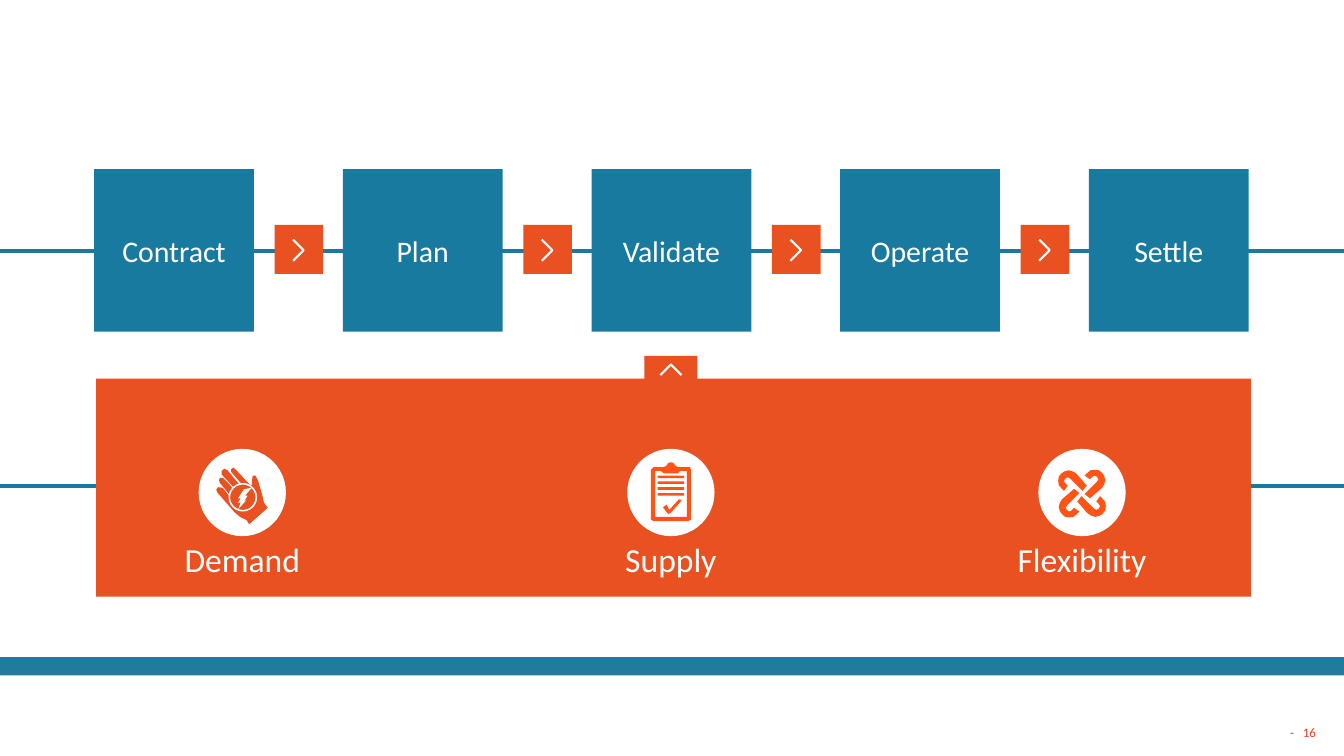
"""Build the slide showing a five-step process fed by demand, supply and flexibility."""
from pptx import Presentation
from pptx.dml.color import RGBColor
from pptx.enum.shapes import MSO_CONNECTOR as Connector, MSO_SHAPE as Shape
from pptx.enum.text import MSO_ANCHOR as Anchor, PP_ALIGN as Align
from pptx.oxml.xmlchemy import OxmlElement
from pptx.util import Cm, Pt

BLUE, BAR_BLUE, ORANGE = "197AA0", "207C9E", "E95120"
ICON_ORANGE, NUMBER_RED, WHITE = "FF5415", "EE3E27", "FFFFFF"
WIDTH, HEIGHT = 25.4, 14.29

CHEVRON = [(-10, -20), (10, 0), (-10, 20)]
TICK = [(15, 13), (-3, 33), (-8, 23), (-15, 28), (-5, 41), (0, 38), (18, 18), (20, 14)]
BOARD_EDGE = [(36, -48), (13, -48), (8, -51), (5, -56), (0, -57), (-5, -56), (-8, -51),
              (-13, -48), (-33, -48), (-38, -43), (-38, 51), (-33, 54), (33, 54),
              (38, 51), (38, -43)]
BOARD_PAPER = [(30, 46), (-30, 46), (-30, -41), (-20, -41), (-13, -36), (13, -36),
               (18, -41), (30, -41)]
KNOT_LOOP = [(-34, -5), (-27, -15), (-32, -20), (-34, -24), (-32, -28), (-27, -31),
             (-22, -28), (1, -5), (9, -15), (-11, -38), (-18, -42), (-25, -44),
             (-33, -42), (-39, -38), (-44, -32), (-45, -24), (-44, -16), (-39, -10)]
HAND = [(25, -32), (20, -32), (18, -22), (18, -14), (15, -14), (-13, -44), (-17, -47),
        (-21, -44), (-21, -39), (3, -11), (5, -7), (2, -6), (-13, -24), (-28, -42),
        (-34, -45), (-39, -41), (-39, -34), (-8, -1), (-7, 4), (-10, 4), (-23, -14),
        (-36, -27), (-42, -28), (-44, -24), (-43, -19), (-20, 9), (-18, 13), (-21, 12),
        (-33, -4), (-38, -9), (-46, -10), (-49, -6), (-48, -1), (-15, 37), (-3, 47),
        (8, 52), (13, 60), (48, 29), (41, 19), (38, 6), (30, -22)]
BOLT = [(5, 6), (18, -9), (3, -6), (-8, 11), (-3, 11), (-8, 19), (-3, 19), (-8, 32),
        (8, 14), (3, 17), (10, 6)]


def rgb(value):
    """Turn a hex string into a colour."""
    return RGBColor.from_string(value)


def turned(points, quarters):
    """Turn points clockwise about the origin by quarter turns."""
    for _ in range(quarters):
        points = [(-y, x) for x, y in points]
    return points


class Painter:
    """Hold the font and the current slide, and draw each kind of element."""

    def __init__(self, slide, font="Calibri"):
        """Keep the slide and the font."""
        self.shapes = slide.shapes
        self.font = font

    def style(self, shape, fill, line=None, weight=0.03):
        """Set fill and outline and drop the shadow."""
        shape.shadow.inherit = False
        if fill:
            shape.fill.solid()
            shape.fill.fore_color.rgb = rgb(fill)
        else:
            shape.fill.background()
        if line:
            shape.line.color.rgb = rgb(line)
            shape.line.width = Cm(weight)
        else:
            shape.line.fill.background()

    def format_run(self, run, size, color):
        """Set the font of a run."""
        run.font.name, run.font.size = self.font, Pt(size)
        run.font.color.rgb = rgb(color)

    def box(self, left, top, width, height, fill, text="", size=16):
        """Draw a rectangle with optional centred white text."""
        box = self.shapes.add_shape(Shape.RECTANGLE, Cm(left), Cm(top), Cm(width), Cm(height))
        self.style(box, fill)
        if text:
            frame = box.text_frame
            frame.text = text
            frame.vertical_anchor = Anchor.MIDDLE
            frame.paragraphs[0].alignment = Align.CENTER
            self.format_run(frame.paragraphs[0].runs[0], size, WHITE)

    def disc(self, x, y, diameter, fill, line=None):
        """Draw a circle about its centre."""
        corner = Cm(x - diameter / 2), Cm(y - diameter / 2)
        disc = self.shapes.add_shape(Shape.OVAL, *corner, Cm(diameter), Cm(diameter))
        self.style(disc, fill, line)

    def outline(self, x, y, contours, fill=None, line=None):
        """Draw contours given in hundredths of a centimetre about a centre."""
        builder = self.shapes.build_freeform(*contours[0][0], scale=Cm(0.01))
        for index, points in enumerate(contours):
            if index:
                builder.move_to(*points[0])
            builder.add_line_segments(points[1:], close=bool(fill))
        self.style(builder.convert_to_shape(Cm(x), Cm(y)), fill, line, 0.04)

    def rail(self, y):
        """Draw a horizontal line across the slide."""
        rail = self.shapes.add_connector(Connector.STRAIGHT, 0, Cm(y), Cm(WIDTH), Cm(y))
        rail.line.color.rgb = rgb(BLUE)
        rail.line.width = Cm(0.07)
        rail._element.spPr.append(OxmlElement("a:effectLst"))

    def page_number(self, number):
        """Write the page number at the bottom right."""
        frame = self.shapes.add_textbox(Cm(21.82), Cm(13.11), Cm(3.3), Cm(1.02)).text_frame
        frame.word_wrap = True
        frame.vertical_anchor = Anchor.BOTTOM
        paragraph = frame.paragraphs[0]
        paragraph.alignment = Align.RIGHT
        paragraph.line_spacing = 0.93
        for text, color in (("- ", BAR_BLUE), (number, NUMBER_RED)):
            run = paragraph.add_run()
            run.text = text
            self.format_run(run, 7, color)
        paragraph.runs[0]._r.get_or_add_rPr().set("spc", "150")


def draw_process(painter):
    """Draw the five steps and the arrows between them."""
    painter.rail(4.74)
    steps = ["Contract", "Plan", "Validate", "Operate", "Settle"]
    for index, step in enumerate(steps):
        left = 1.78 + 4.7 * index
        painter.box(left, 3.2, 3.02, 3.07, BLUE, step)
        if index < len(steps) - 1:
            painter.box(left + 3.41, 4.25, 0.92, 0.93, ORANGE)
            painter.outline(left + 3.86, 4.73, [CHEVRON], line=WHITE)


def draw_inputs(painter):
    """Draw the panel with the three inputs and their icons."""
    painter.rail(9.18)
    painter.box(1.82, 7.16, 21.82, 4.12, ORANGE)
    painter.box(12.18, 6.73, 1, 0.5, ORANGE)
    painter.outline(12.68, 6.99, [turned(CHEVRON, 3)], line=WHITE)

    demand, supply, flexibility, middle = 4.58, 12.68, 20.45, 9.31
    inputs = {"Demand": demand, "Supply": supply, "Flexibility": flexibility}
    for name, x in inputs.items():
        painter.box(x - 2.05, 10.06, 4.1, 1.02, ORANGE, name, 18)
        painter.disc(x, middle, 1.65, WHITE)

    painter.outline(demand, middle, [HAND], ORANGE)
    painter.disc(demand + 0.01, 9.4, 0.51, ORANGE, WHITE)
    painter.outline(demand, middle, [BOLT], WHITE)

    painter.outline(supply, middle, [BOARD_EDGE, BOARD_PAPER], ICON_ORANGE)
    painter.outline(supply, middle, [TICK], ICON_ORANGE)
    for row in range(4):
        painter.box(supply - 0.25, 8.99 + 0.11 * row, 0.5, 0.05, ICON_ORANGE)

    for quarters in range(4):
        painter.outline(flexibility, 9.33, [turned(KNOT_LOOP, quarters)], ICON_ORANGE)


def main():
    """Build and save the slide."""
    deck = Presentation()
    deck.slide_width, deck.slide_height = Cm(WIDTH), Cm(HEIGHT)
    painter = Painter(deck.slides.add_slide(deck.slide_layouts[6]))
    painter.page_number("16")
    painter.box(0, 12.42, WIDTH, 0.35, BAR_BLUE)
    draw_process(painter)
    draw_inputs(painter)
    deck.save("out.pptx")


if __name__ == "__main__":
    main()
